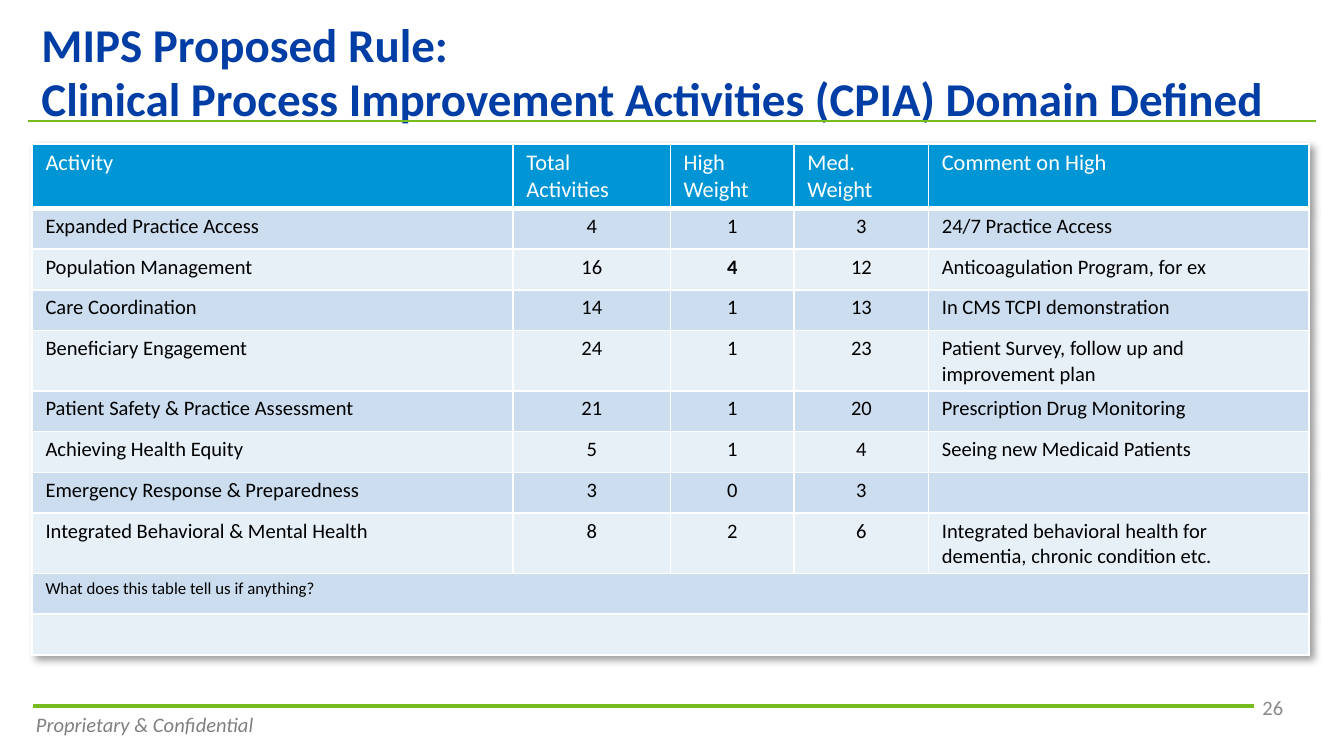
from lxml.etree import SubElement
from pptx import Presentation
from pptx.dml.color import RGBColor
from pptx.enum.shapes import MSO_CONNECTOR as CONN
from pptx.enum.text import MSO_ANCHOR as ANCHOR, MSO_AUTO_SIZE as FIT, PP_ALIGN as ALIGN
from pptx.oxml import parse_xml
from pptx.oxml.ns import nsdecls, qn
from pptx.util import Cm, Pt

FONT = "Calibri"
WHITE = RGBColor(0xFF, 0xFF, 0xFF)
BLACK = RGBColor(0, 0, 0)
NAVY = RGBColor(0x00, 0x3D, 0xA5)
GREEN = RGBColor(0x77, 0xBC, 0x1F)
BLUE = RGBColor(0x00, 0x96, 0xD5)
BANDS = (RGBColor(0xCC, 0xDD, 0xEF), RGBColor(0xE7, 0xEF, 0xF7))
PAGE_GRAY = RGBColor(0x89, 0x89, 0x89)
FOOTER_GRAY = RGBColor(0x80, 0x80, 0x80)

TITLE = "MIPS Proposed Rule: \vClinical Process Improvement Activities (CPIA) Domain Defined"
HEADER = ("Activity", "Total Activities", "High\nWeight", "Med.\nWeight", "Comment on High")
ACTIVITIES = (
    ("Expanded Practice Access", 4, 1, 3, "24/7 Practice Access"),
    ("Population Management", 16, 4, 12, "Anticoagulation Program, for ex"),
    ("Care Coordination", 14, 1, 13, "In CMS TCPI demonstration"),
    ("Beneficiary Engagement", 24, 1, 23, "Patient Survey, follow up and improvement plan"),
    ("Patient Safety & Practice Assessment", 21, 1, 20, "Prescription Drug Monitoring"),
    ("Achieving Health Equity", 5, 1, 4, "Seeing new Medicaid Patients"),
    ("Emergency Response & Preparedness", 3, 0, 3, ""),
    ("Integrated Behavioral & Mental Health", 8, 2, 6,
     "Integrated behavioral health for dementia, chronic condition etc."),
)
NOTES = ("What does this table tell us if anything?", "")
COL_WIDTHS = (9.09, 2.97, 2.34, 2.54, 7.19)
HEADER_H, ROW_H, TALL_ROW_H = 1.22, 0.77, 1.14
TALL_ROWS = (4, 8)


def format_text(tf, size, color, bold=False, italic=False, align=None):
    for p in tf.paragraphs:
        if align is not None:
            p.alignment = align
        for r in p.runs:
            f = r.font
            f.name, f.size, f.bold, f.italic = FONT, Pt(size), bold, italic
            f.color.rgb = color


def add_rule(slide, x1, x2, y, weight):
    line = slide.shapes.add_connector(CONN.STRAIGHT, Cm(x1), Cm(y), Cm(x2), Cm(y))
    line.line.color.rgb = GREEN
    line.line.width = Pt(weight)
    SubElement(line._element.spPr, qn("a:effectLst"))


def add_label(slide, text, x, y, w, h):
    tf = slide.shapes.add_textbox(Cm(x), Cm(y), Cm(w), Cm(h)).text_frame
    tf.word_wrap = True
    tf.text = text
    return tf


def add_title(slide, x, y, w, h):
    # Rule lies behind the title text
    add_rule(slide, x, x + w, y + h + 0.23, 0.75)
    sp = slide.shapes.title
    sp.left, sp.top, sp.width, sp.height = Cm(x), Cm(y), Cm(w), Cm(h)
    tf = sp.text_frame
    tf.text = TITLE
    tf.word_wrap = True
    tf.auto_size = FIT.NONE
    tf.vertical_anchor = ANCHOR.MIDDLE
    tf.paragraphs[0].line_spacing = Pt(29)
    format_text(tf, 25.2, NAVY, bold=True, align=ALIGN.LEFT)


def add_footer(slide, x, y, w, h):
    add_rule(slide, x + 0.2, x + 23.27, y + 0.13, 2.25)
    # Page number
    tf = add_label(slide, "26", x + w - 1.07, y, 1.07, 0.51)
    tf.vertical_anchor = ANCHOR.BOTTOM
    tf.margin_left = tf.margin_right = 0
    format_text(tf, 11, PAGE_GRAY, align=ALIGN.CENTER)
    # Confidentiality line
    tf = add_label(slide, "Proprietary & Confidential", x, y + 0.13, 5.92, h - 0.13)
    format_text(tf, 11, FOOTER_GRAY, italic=True)


def set_borders(cell, bottom):
    tc_pr = cell._tc.get_or_add_tcPr()
    for i, (side, weight) in enumerate((("L", 1), ("R", 1), ("T", 1), ("B", bottom))):
        tc_pr.insert(i, parse_xml(
            f'<a:ln{side} {nsdecls("a")} w="{Pt(weight)}"><a:solidFill>'
            f'<a:srgbClr val="{WHITE}"/></a:solidFill></a:ln{side}>'))


def fill_cell(cell, text, fill, size, color, bold=False, align=None, bottom=1):
    cell.fill.solid()
    cell.fill.fore_color.rgb = fill
    set_borders(cell, bottom)
    cell.margin_left = cell.margin_right = Cm(0.25)
    cell.margin_top = cell.margin_bottom = Cm(0.1)
    tf = cell.text_frame
    if text:
        tf.text = text
        format_text(tf, size, color, bold, align=align)
    else:
        # Small end mark, so an empty cell does not stretch its row
        SubElement(tf.paragraphs[0]._p, qn("a:endParaRPr"), sz=str(size * 100))


def add_activity_table(slide, x, y, w, h):
    n_rows, n_cols = 1 + len(ACTIVITIES) + len(NOTES), len(HEADER)
    table = slide.shapes.add_table(n_rows, n_cols, Cm(x), Cm(y), Cm(w), Cm(h)).table
    for col, width in zip(table.columns, COL_WIDTHS):
        col.width = Cm(width)
    for i, row in enumerate(table.rows):
        row.height = Cm(HEADER_H if i == 0 else TALL_ROW_H if i in TALL_ROWS else ROW_H)
    # Table shadow
    table._tbl.tblPr.insert(0, parse_xml(
        f'<a:effectLst {nsdecls("a")}><a:outerShdw blurRad="50800" dist="38100" '
        'dir="2700000" algn="tl" rotWithShape="0"><a:srgbClr val="000000">'
        '<a:alpha val="40000"/></a:srgbClr></a:outerShdw></a:effectLst>'))
    # Header row
    for c, text in enumerate(HEADER):
        fill_cell(table.cell(0, c), text, BLUE, 12, WHITE, bottom=3)
    # Activities, with the largest high-weight count in bold
    top_high = max(row[2] for row in ACTIVITIES)
    for i, row in enumerate(ACTIVITIES):
        for c, value in enumerate(row):
            fill_cell(table.cell(i + 1, c), str(value), BANDS[i % 2], 11, BLACK,
                      bold=c == 2 and value == top_high,
                      align=ALIGN.CENTER if 0 < c < 4 else None)
    # Full-width notes
    for i, text in enumerate(NOTES, len(ACTIVITIES)):
        for c in range(n_cols):
            fill_cell(table.cell(i + 1, c), text if c == 0 else "", BANDS[i % 2], 9, BLACK)
        table.cell(i + 1, 0).merge(table.cell(i + 1, n_cols - 1))


def main():
    prs = Presentation()
    prs.slide_width, prs.slide_height = Cm(25.4), Cm(14.29)
    slide = prs.slides.add_slide(prs.slide_layouts[5])
    add_footer(slide, 0.43, 13.21, 24.16, 0.87)
    add_title(slide, 0.53, 0.64, 24.34, 1.42)
    add_activity_table(slide, 0.61, 2.72, 24.13, 9.63)
    prs.save("out.pptx")


if __name__ == "__main__":
    main()
